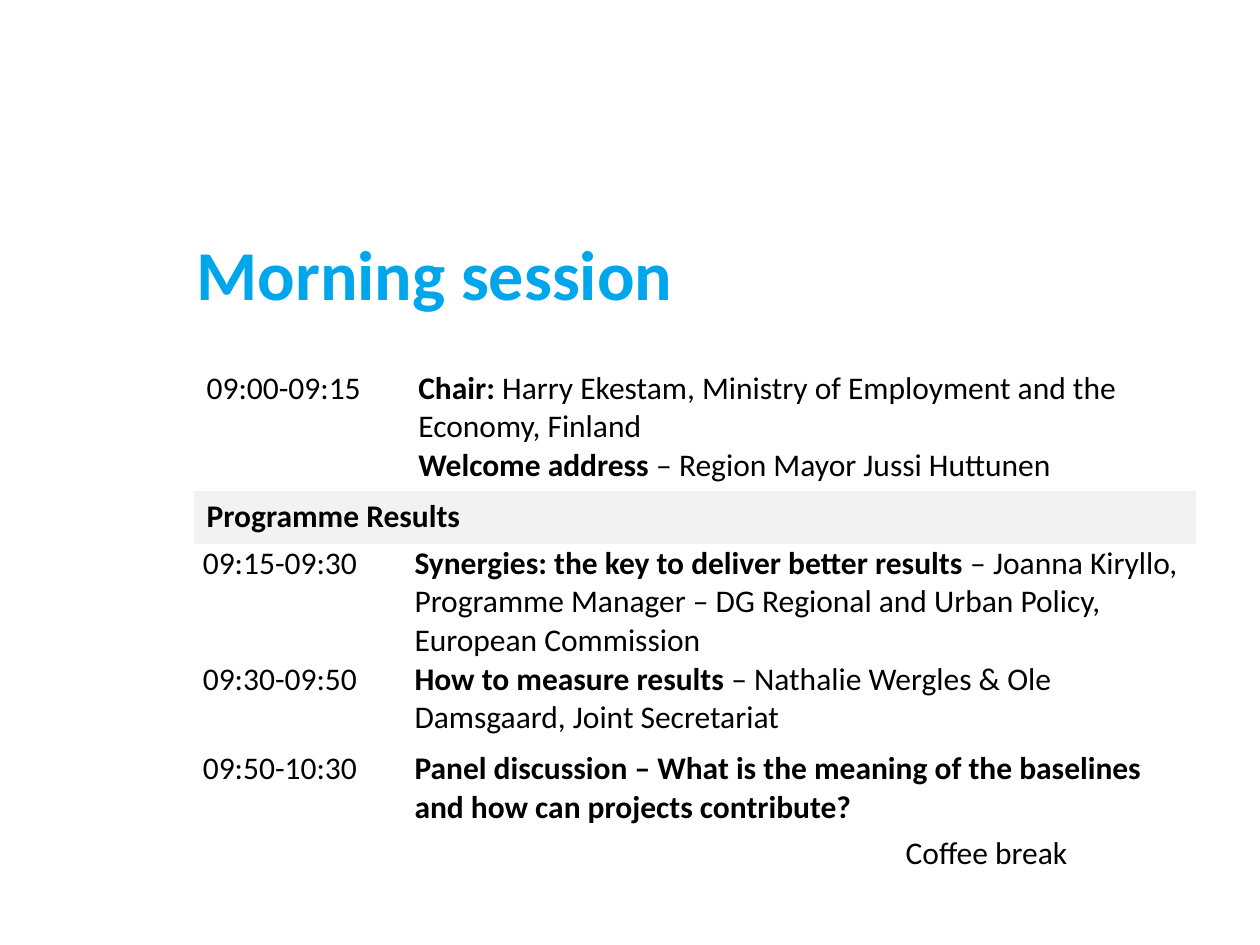
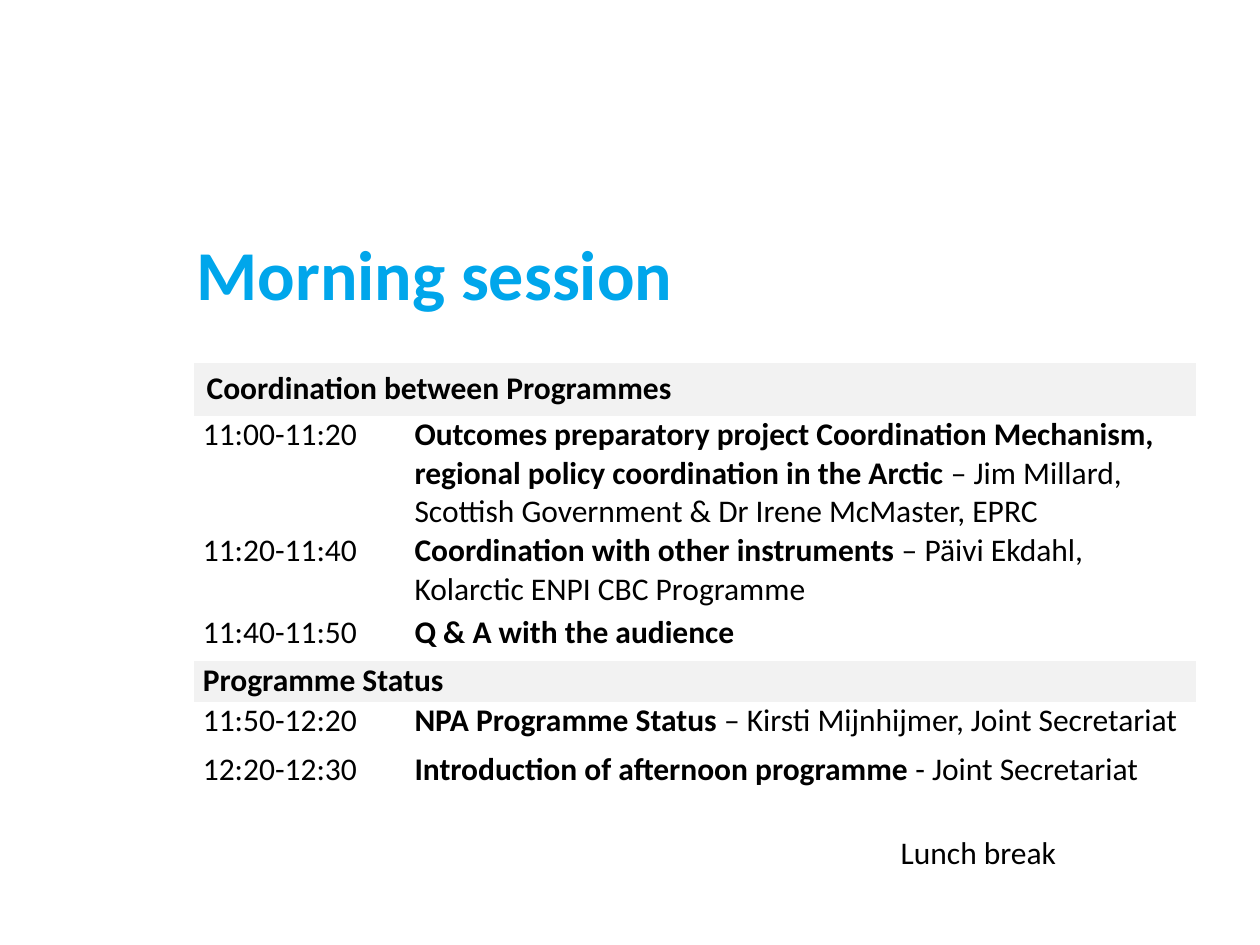
from typing import NamedTuple

from pptx import Presentation
from pptx.dml.color import RGBColor
from pptx.enum.text import MSO_ANCHOR as Anchor, PP_ALIGN as Align
from pptx.oxml.ns import qn
from pptx.util import Inches, Pt

# Shared look
FONT = "Calibri"
TITLE_BLUE = RGBColor(0x00, 0xA6, 0xEB)
TEXT_BLACK = RGBColor(0x00, 0x00, 0x00)
BAND_GREY = RGBColor(0xF2, 0xF2, 0xF2)
PLAIN_TABLE_STYLE = "{2D5ABB26-0587-4C30-8999-92F81FD0307C}"

# Grid: 100 columns by 75 rows over the slide
SLIDE_WIDTH, SLIDE_HEIGHT = Inches(10), Inches(7.5)
COLUMN, ROW = SLIDE_WIDTH / 100, SLIDE_HEIGHT / 75
ROOMY_MARGINS = (1, 0.5)
TIGHT_MARGINS = (0.7, 0)


class Box(NamedTuple):
    left: float
    top: float
    width: float
    height: float

    def lengths(self):
        return (columns(self.left), rows(self.top),
                columns(self.width), rows(self.height))


class Entry(NamedTuple):
    """One agenda row; without a time it is a section band."""
    height: float
    time: str
    lines: list  # (bold part, plain part) for each paragraph
    margins: tuple = TIGHT_MARGINS


TITLE_BOX = Box(14.6, 17.5, 70.9, 8.2)
AGENDA_LEFT, AGENDA_TOP = 15.4, 28.8
TIME_WIDTH, TOPIC_WIDTH = 16.8, 62.7
BREAK_TOP, BREAK_HEIGHT = 65.6, 4

MORNING_OPENING = [
    Entry(10.2, "09:00-09:15", [
        ("Chair: ", "Harry Ekestam, Ministry of Employment and the Economy, Finland"),
        ("Welcome address ", "– Region Mayor Jussi Huttunen"),
    ], ROOMY_MARGINS),
    Entry(4.2, "", [("Programme Results", "")], ROOMY_MARGINS),
    Entry(9.2, "09:15-09:30", [
        ("Synergies: the key to deliver better results ",
         "– Joanna Kiryllo, Programme Manager – DG Regional and Urban Policy, "
         "European Commission")]),
    Entry(7.1, "09:30-09:50", [
        ("How to measure results ",
         "– Nathalie Wergles & Ole Damsgaard, Joint Secretariat")]),
    Entry(6.5, "09:50-10:30", [
        ("Panel discussion – What is the meaning of the baselines "
         "and how can projects contribute?", "")]),
]

MORNING_COORDINATION = [
    Entry(4.2, "", [("Coordination between Programmes", "")], ROOMY_MARGINS),
    Entry(9.2, "11:00-11:20", [
        ("Outcomes preparatory project Coordination Mechanism, "
         "regional policy coordination in the Arctic ",
         "– Jim Millard, Scottish Government & Dr Irene McMaster, EPRC")]),
    Entry(6.5, "11:20-11:40", [
        ("Coordination with other instruments ",
         "– Päivi Ekdahl, Kolarctic ENPI CBC Programme")]),
    Entry(3.8, "11:40-11:50", [("Q & A with the audience", "")]),
    Entry(3.2, "", [("Programme Status", "")]),
    Entry(3.9, "11:50-12:20", [
        ("NPA Programme Status ", "– Kirsti Mijnhijmer, Joint Secretariat")]),
    Entry(3.1, "12:20-12:30", [
        ("Introduction of afternoon programme ", "- Joint Secretariat")]),
]


def columns(count):
    return round(count * COLUMN)


def rows(count):
    return round(count * ROW)


def style_font(font, size=18, color=TEXT_BLACK):
    font.name = FONT
    font.size = Pt(size)
    font.color.rgb = color


def add_title(slide, text, box):
    title = slide.shapes.title
    title.left, title.top, title.width, title.height = box.lengths()
    frame = title.text_frame
    frame.text = text
    frame.vertical_anchor = Anchor.MIDDLE
    paragraph = frame.paragraphs[0]
    paragraph.alignment = Align.LEFT
    style_font(paragraph.font, 40, TITLE_BLUE)
    paragraph.font.bold = True


def fill_cell(cell, lines, margins):
    cell.fill.background()
    cell.margin_left = cell.margin_right = columns(margins[0])
    cell.margin_top = cell.margin_bottom = rows(margins[1])
    frame = cell.text_frame
    for index, parts in enumerate(lines):
        paragraph = frame.add_paragraph() if index else frame.paragraphs[0]
        style_font(paragraph.font)
        for text, bold in zip(parts, (True, False)):
            if text:
                run = paragraph.add_run()
                run.text = text
                run.font.bold = bold


def add_agenda(slide, entries, box):
    graphic = slide.shapes.add_table(len(entries), 2, *box.lengths())
    graphic.element.find(".//" + qn("a:tableStyleId")).text = PLAIN_TABLE_STYLE
    table = graphic.table
    table.first_row = table.horz_banding = False
    for table_column, width in zip(table.columns, (TIME_WIDTH, TOPIC_WIDTH)):
        table_column.width = columns(width)

    for index, entry in enumerate(entries):
        table.rows[index].height = rows(entry.height)
        first, second = table.cell(index, 0), table.cell(index, 1)
        if entry.time:
            fill_cell(first, [("", entry.time)], entry.margins)
            fill_cell(second, entry.lines, entry.margins)
        else:
            # Section band across both columns
            first.merge(second)
            fill_cell(first, entry.lines, entry.margins)
            first.fill.solid()
            first.fill.fore_color.rgb = BAND_GREY


def add_break_note(slide, text, box):
    frame = slide.shapes.add_textbox(*box.lengths()).text_frame
    frame.word_wrap = False
    frame.text = text
    style_font(frame.paragraphs[0].font)


def add_session_slide(presentation, entries, break_text, break_left, break_width):
    slide = presentation.slides.add_slide(
        presentation.slide_layouts.get_by_name("Title Only"))
    add_title(slide, "Morning session", TITLE_BOX)
    add_agenda(slide, entries, Box(AGENDA_LEFT, AGENDA_TOP, TIME_WIDTH + TOPIC_WIDTH,
                                   sum(entry.height for entry in entries)))
    add_break_note(slide, break_text,
                   Box(break_left, BREAK_TOP, break_width, BREAK_HEIGHT))


def main():
    presentation = Presentation()
    presentation.slide_width, presentation.slide_height = SLIDE_WIDTH, SLIDE_HEIGHT
    add_session_slide(presentation, MORNING_OPENING, "Coffee break", 70.9, 15)
    add_session_slide(presentation, MORNING_COORDINATION, "Lunch break", 70.5, 14.5)
    presentation.save("out.pptx")


if __name__ == "__main__":
    main()
